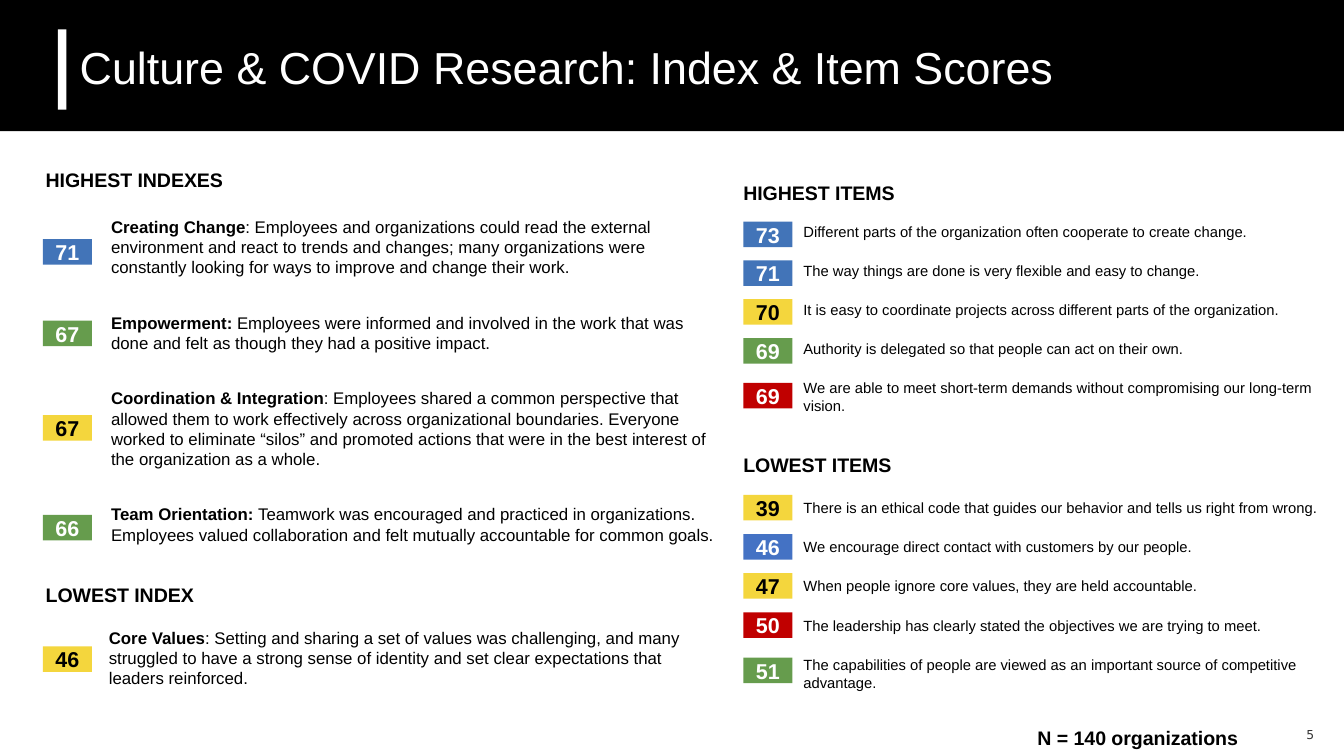
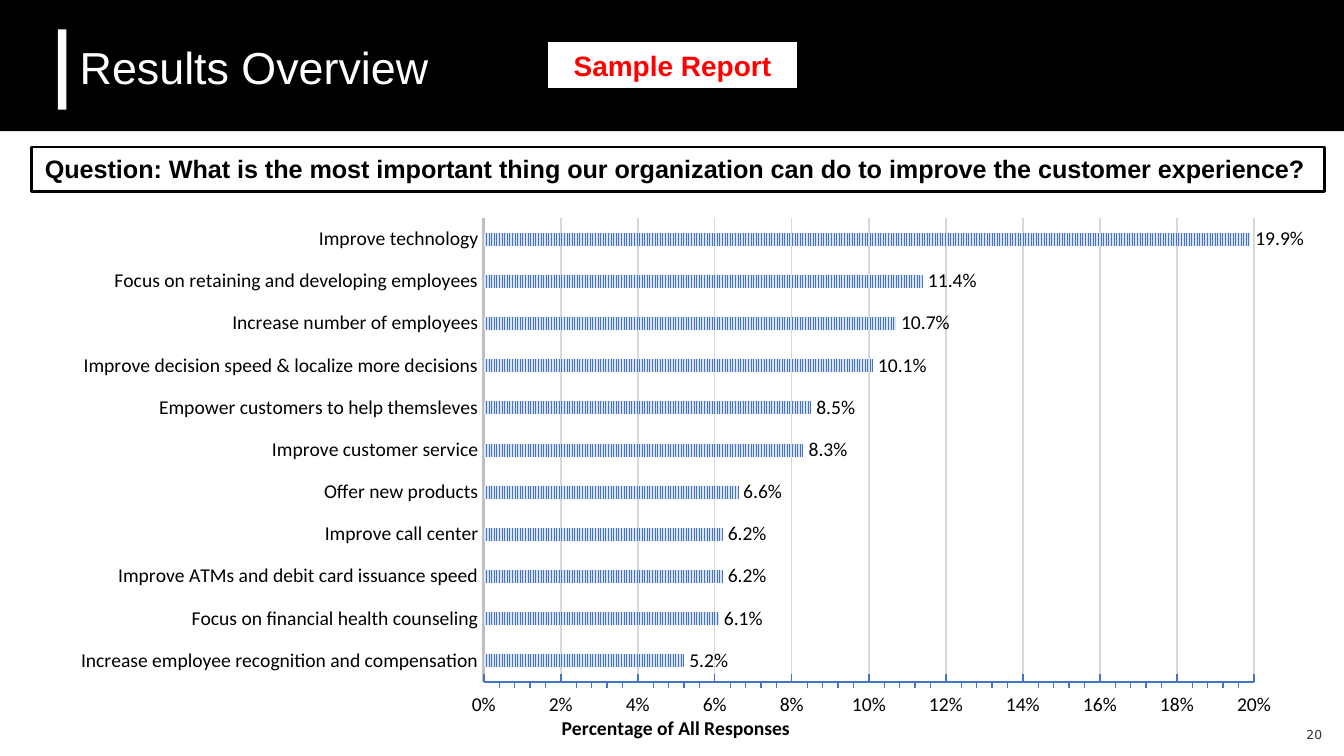
import dataclasses

import pptx
import pptx.chart.data
import pptx.dml.color
import pptx.enum.chart
import pptx.enum.dml
import pptx.enum.shapes
import pptx.enum.text
import pptx.oxml
import pptx.oxml.ns
import pptx.util

Pt = pptx.util.Pt
Align = pptx.enum.text.PP_ALIGN
Anchor = pptx.enum.text.MSO_ANCHOR
Fit = pptx.enum.text.MSO_AUTO_SIZE
Tick = pptx.enum.chart.XL_TICK_MARK


@dataclasses.dataclass(frozen=True)
class Theme:
    # Colours
    black: str = "000000"
    white: str = "FFFFFF"
    blue: str = "4274B8"
    bright: str = "4472C4"
    pale: str = "DAE3F3"
    green: str = "669C4D"
    yellow: str = "F4D63D"
    red: str = "C00000"
    alert: str = "FF0000"
    grey: str = "333333"
    axis: str = "BFBFBF"
    grid: str = "D9D9D9"
    # Fonts
    font: str = "Arial"
    plot: str = "Calibri"
    page: str = "DejaVu Sans"
    # Type sizes
    title: float = 24
    stamp: float = 15
    ask: float = 13.5
    score: float = 11.5
    head: float = 10.5
    body: float = 9
    item: float = 7.9
    foot: float = 6.6
    # Row measures
    line: float = 10.8
    badge: float = 13.7


T = Theme()


def rgb(code):
    return pptx.dml.color.RGBColor.from_string(code)


def style(font, size, color=T.black, bold=False, name=T.font):
    font.size, font.bold, font.name = Pt(size), bold, name
    font.color.rgb = rgb(color)


def write(frame, text, size=T.body, color=T.black, bold=False, name=T.font,
          align=Align.LEFT, anchor=Anchor.TOP, pad=(0, 0, 0, 0), wrap=True,
          fit=Fit.SHAPE_TO_FIT_TEXT, space=None):
    """Fill a frame with a string or a list of (text, bold) runs."""
    frame.word_wrap, frame.auto_size = wrap, fit
    frame.vertical_anchor = anchor
    (frame.margin_left, frame.margin_top,
     frame.margin_right, frame.margin_bottom) = map(Pt, pad)
    para = frame.paragraphs[0]
    para.alignment, para.line_spacing = align, space
    for part, heavy in [(text, bold)] if isinstance(text, str) else text:
        run = para.add_run()
        run.text = part
        style(run.font, size, color, heavy, name)


def label(shapes, text, box, **form):
    write(shapes.add_textbox(*map(Pt, box)).text_frame, text, **form)


def rect(shapes, box, fill=None, line=None, width=0.75):
    shape = shapes.add_shape(pptx.enum.shapes.MSO_SHAPE.RECTANGLE, *map(Pt, box))
    shape.shadow.inherit = False
    if fill:
        shape.fill.solid()
        shape.fill.fore_color.rgb = rgb(fill)
    else:
        shape.fill.background()
    if line:
        shape.line.color.rgb = rgb(line)
        shape.line.width = Pt(width)
    else:
        shape.line.fill.background()
    return shape


def frame(deck, title, page):
    """Add a slide with its band, title and page number."""
    slide = deck.slides.add_slide(deck.slide_layouts[5])
    rect(slide.shapes, (-1.5, -0.7, 725, 71), T.black)
    rect(slide.shapes, (31, 15.7, 4.6, 43), T.white)
    # The title goes in front of the band
    head = slide.shapes.title
    slide.shapes.element.append(head.element)
    head.left, head.top, head.width, head.height = map(Pt, (35.5, 5, 556.5, 65.5))
    write(head.text_frame, title, size=T.title, color=T.white,
          anchor=Anchor.MIDDLE, pad=(7.2,) * 4, fit=Fit.NONE, space=0.9)
    label(slide.shapes, page, (697.7, 389.5, 13, 8), size=T.foot, name=T.page,
          color=T.grey, pad=(2.2, 0.2, 0, 0))
    return slide


def badge(shapes, score, fill, x, y, anchor=Anchor.TOP):
    shape = rect(shapes, (x, y, 26.3, T.badge), fill)
    write(shape.text_frame, score, size=T.score, bold=True, align=Align.CENTER,
          color=T.black if fill == T.yellow else T.white, anchor=anchor)


def header(shapes, text, x, y, width):
    label(shapes, text, (x, y, width, 12.7), size=T.head, bold=True, wrap=False)


def index(slide, box, head, rows, first, indent):
    """Heading, then scores with text; each row is as tall as its lines."""
    x, y, width = box
    shapes = slide.shapes.add_group_shape().shapes
    header(shapes, head, x + 1.5, y, 96.5 if len(rows) > 1 else 80.6)
    y += first
    for score, fill, lines, drop, name, text in rows:
        badge(shapes, score, fill, x, y + drop, Anchor.MIDDLE)
        label(shapes, [(name, True), (text, False)],
              (x + indent, y, width - indent, lines * T.line))
        y += lines * T.line + 19


def items(slide, box, head, rows, first, pitch, rise):
    """Heading, then evenly spaced scores, each with a short statement."""
    x, y, width = box
    shapes = slide.shapes.add_group_shape().shapes
    header(shapes, head, x, y, 82)
    for i, (score, fill, lines, text) in enumerate(rows):
        top = y + first + i * pitch
        badge(shapes, score, fill, x, top + (lines - 1) * 3.2)
        label(shapes, text, (x + 32.2, top + rise, width - 32.2, lines * 9.6),
              size=T.item)


def bars(slide, box, rows):
    """Bar chart of the answers, listed from the top down."""
    data = pptx.chart.data.CategoryChartData()
    data.categories = [name for name, value in reversed(rows)]
    data.add_series("Series 1", [value / 100 for name, value in reversed(rows)])
    chart = slide.shapes.add_chart(pptx.enum.chart.XL_CHART_TYPE.BAR_CLUSTERED,
                                   *map(Pt, box), data).chart
    chart.has_title = chart.has_legend = False
    style(chart.font, 10, name=T.plot)

    # Bars and their labels
    plot = chart.plots[0]
    plot.gap_width, plot.overlap, plot.vary_by_categories = 227, -48, False
    fill = plot.series[0].format.fill
    fill.patterned()
    fill.pattern = pptx.enum.dml.MSO_PATTERN.NARROW_VERTICAL
    fill.fore_color.rgb, fill.back_color.rgb = rgb(T.bright), rgb(T.pale)
    plot.has_data_labels = True
    tags = plot.data_labels
    tags.show_value = True
    tags.position = pptx.enum.chart.XL_LABEL_POSITION.OUTSIDE_END
    tags.number_format, tags.number_format_is_linked = "0.0%", False
    style(tags.font, T.head, name=T.plot)

    # Axes
    cat, val = chart.category_axis, chart.value_axis
    for axis, color, width in (cat, T.axis, 1.5), (val, T.bright, 0.75):
        style(axis.tick_labels.font, T.head, name=T.plot)
        axis.format.line.color.rgb = rgb(color)
        axis.format.line.width = Pt(width)
    cat.major_tick_mark = cat.minor_tick_mark = Tick.NONE
    cat.has_major_gridlines = False
    val.major_tick_mark, val.minor_tick_mark = Tick.INSIDE, Tick.OUTSIDE
    val.minimum_scale, val.maximum_scale, val.major_unit = 0, 0.2, 0.02
    val.tick_labels.number_format = "0%"
    val.tick_labels.number_format_is_linked = False
    val.has_major_gridlines = True
    val.major_gridlines.format.line.color.rgb = rgb(T.grid)
    val.major_gridlines.format.line.width = Pt(0.75)
    write_to = val.axis_title.text_frame.paragraphs[0].add_run()
    write_to.text = "Percentage of All Responses"
    style(write_to.font, T.head, bold=True, name=T.plot)

    # Fixed place of the inner plot area
    area = chart.element.find(".//" + pptx.oxml.ns.qn("c:plotArea"))
    for old in area.findall(pptx.oxml.ns.qn("c:layout")):
        area.remove(old)
    marks = [("layoutTarget", "inner"), ("xMode", "edge"), ("yMode", "edge"),
             ("x", 0.36), ("y", 0.026), ("w", 0.573), ("h", 0.854)]
    inner = "".join(f'<c:{tag} val="{value}"/>' for tag, value in marks)
    area.insert(0, pptx.oxml.parse_xml(
        f'<c:layout {pptx.oxml.ns.nsdecls("c")}>'
        f"<c:manualLayout>{inner}</c:manualLayout></c:layout>"))


def scores(deck):
    slide = frame(deck, "Culture & COVID Research: Index & Item Scores", "5")
    index(slide, (23, 312.5, 357.8), "LOWEST INDEX", [
        ("46", T.yellow, 3, 10.1, "Core Values",
         ": Setting and sharing a set of values was challenging, and many "
         "struggled to have a strong sense of identity and set clear "
         "expectations that leaders reinforced."),
    ], first=23.7, indent=35.3)
    index(slide, (23, 90, 359.3), "HIGHEST INDEXES", [
        ("71", T.blue, 3, 12.2, "Creating Change",
         ": Employees and organizations could read the external environment "
         "and react to trends and changes; many organizations were constantly "
         "looking for ways to improve and change their work."),
        ("67", T.green, 2, 4.5, "Empowerment: ",
         "Employees were informed and involved in the work that was done and "
         "felt as though they had a positive impact."),
        ("67", T.yellow, 4, 14.5, "Coordination & Integration",
         ": Employees shared a common perspective that allowed them to work "
         "effectively across organizational boundaries. Everyone worked to "
         "eliminate “silos” and promoted actions that were in the best "
         "interest of the organization as a whole."),
        ("66", T.green, 2, 5.7, "Team Orientation: ",
         "Teamwork was encouraged and practiced in organizations. Employees "
         "valued collaboration and felt mutually accountable for common goals."),
    ], first=25.9, indent=36.5)
    items(slide, (398.2, 97.2, 309.6), "HIGHEST ITEMS", [
        ("73", T.blue, 1, "Different parts of the organization often cooperate "
                          "to create change."),
        ("71", T.blue, 1, "The way things are done is very flexible and easy "
                          "to change."),
        ("70", T.yellow, 1, "It is easy to coordinate projects across different "
                            "parts of the organization."),
        ("69", T.green, 1, "Authority is delegated so that people can act on "
                           "their own."),
        ("69", T.red, 2, "We are able to meet short-term demands without "
                         "compromising our long-term vision."),
    ], first=21.5, pitch=20.8, rise=0.9)
    items(slide, (398.2, 242.8, 309.6), "LOWEST ITEMS", [
        ("39", T.yellow, 1, "There is an ethical code that guides our behavior "
                            "and tells us right from wrong."),
        ("46", T.bright, 1, "We encourage direct contact with customers by our "
                            "people."),
        ("47", T.yellow, 1, "When people ignore core values, they are held "
                            "accountable."),
        ("50", T.red, 1, "The leadership has clearly stated the objectives we "
                         "are trying to meet."),
        ("51", T.green, 2, "The capabilities of people are viewed as an "
                           "important source of competitive advantage."),
    ], first=22.3, pitch=21, rise=2.1)
    header(slide.shapes, "N = 140 organizations", 555.8, 388.8, 109.4)


def results(deck):
    slide = frame(deck, "Results Overview", "20")
    bars(slide, (0, 109.4, 720, 291), [
        ("Improve technology", 19.9),
        ("Focus on retaining and developing employees", 11.4),
        ("Increase number of employees", 10.7),
        ("Improve decision speed & localize more decisions", 10.1),
        ("Empower customers to help themsleves", 8.5),
        ("Improve customer service", 8.3),
        ("Offer new products", 6.6),
        ("Improve call center", 6.2),
        ("Improve ATMs and debit card issuance speed", 6.2),
        ("Focus on financial health counseling", 6.1),
        ("Increase employee recognition and compensation", 5.2),
    ])
    # Question and stamp
    pad = (7.2, 3.6, 7.2, 3.6)
    ask = rect(slide.shapes, (17, 78.8, 692.8, 23.8), line=T.black, width=1.5)
    write(ask.text_frame, "Question: What is the most important thing our "
          "organization can do to improve the customer experience?",
          size=T.ask, bold=True, pad=pad)
    stamp = rect(slide.shapes, (293, 22.3, 134.6, 25.2), T.white, T.black)
    write(stamp.text_frame, "Sample Report", size=T.stamp, color=T.alert,
          bold=True, align=Align.CENTER, pad=pad)


def main():
    deck = pptx.Presentation()
    deck.slide_width, deck.slide_height = Pt(720), Pt(405)
    scores(deck)
    results(deck)
    deck.save("out.pptx")


if __name__ == "__main__":
    main()
